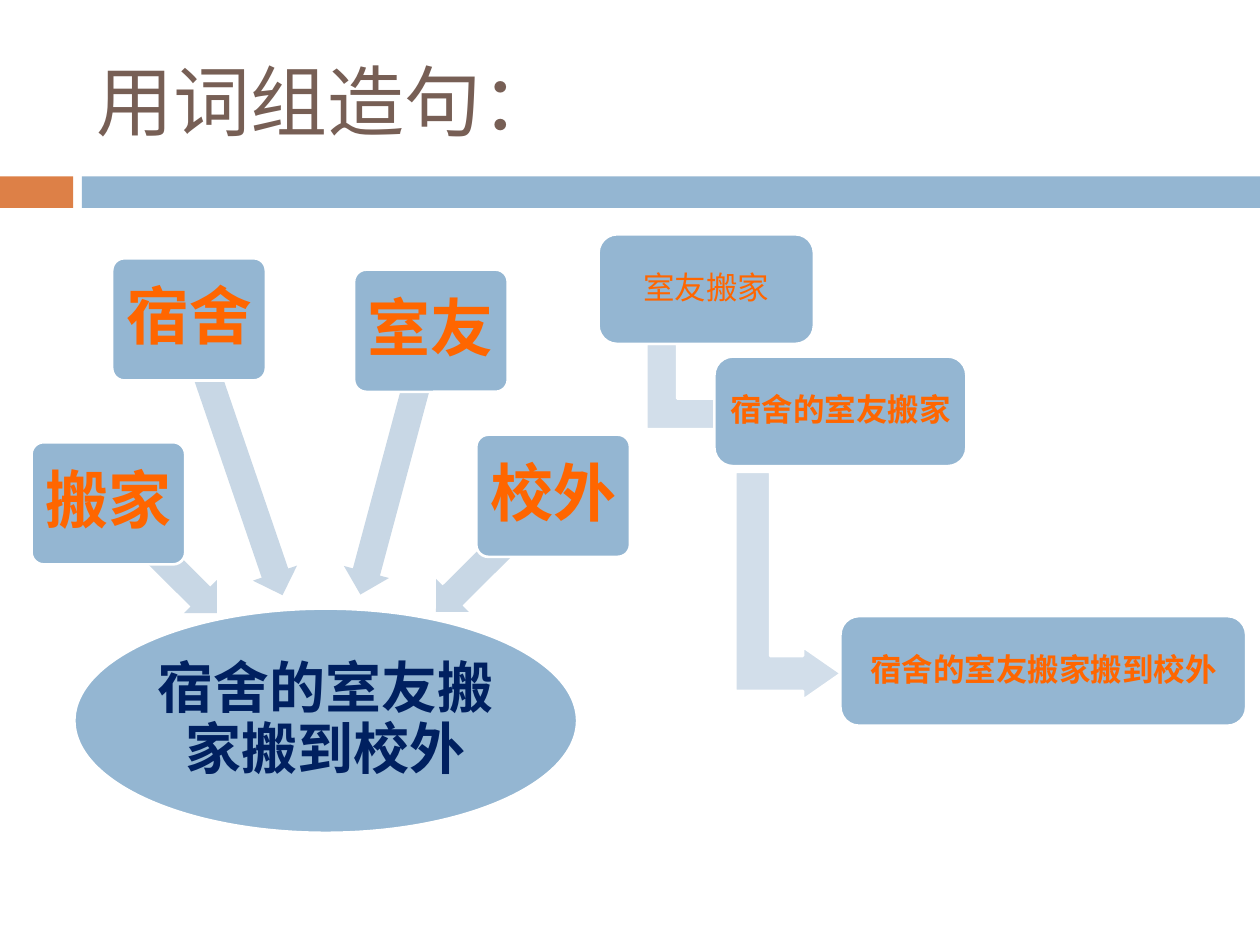
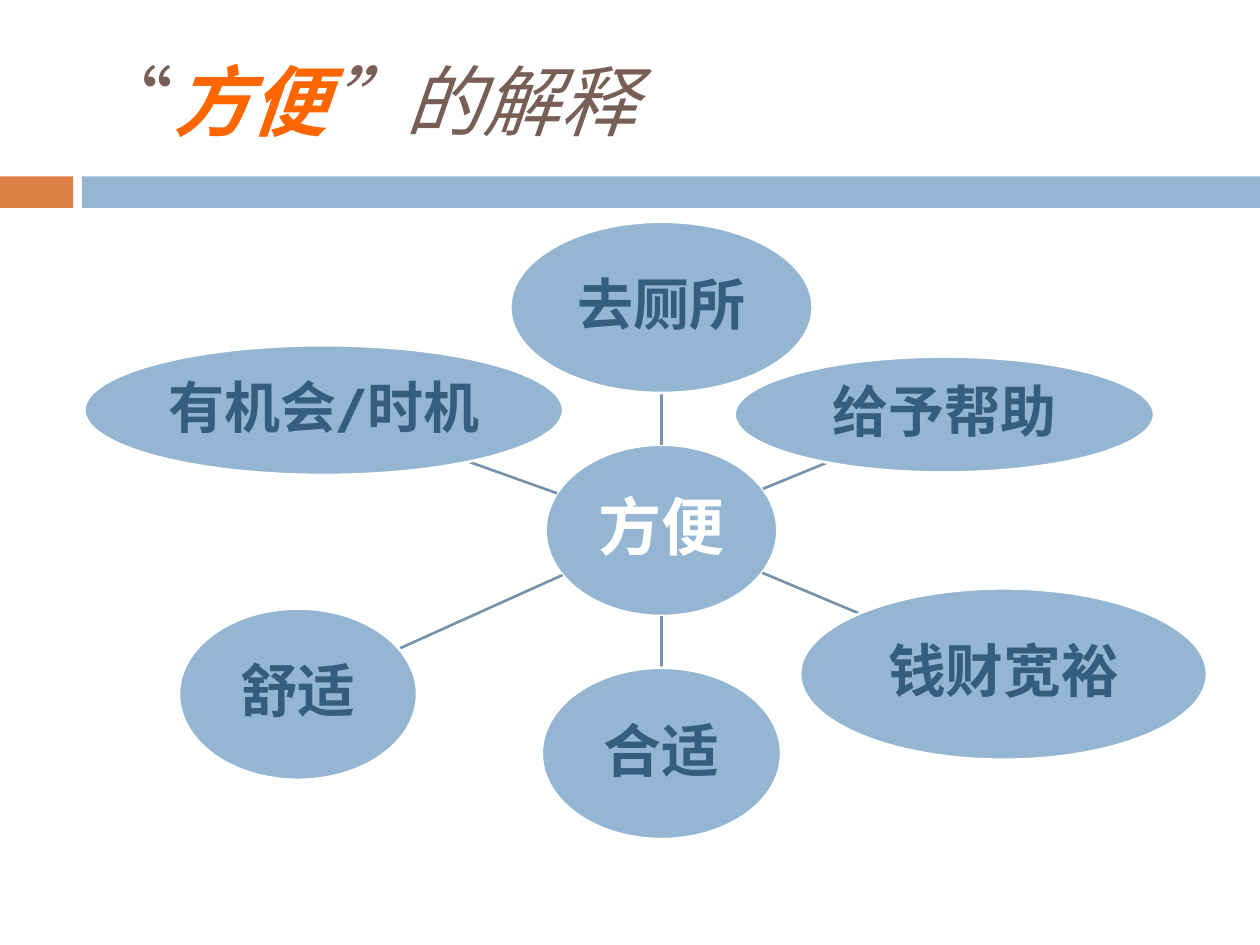
import math

import pptx
import pptx.dml.color
import pptx.enum.lang
import pptx.enum.shapes
import pptx.enum.text
import pptx.oxml.ns
import pptx.util
from lxml import etree

SHAPE = pptx.enum.shapes.MSO_SHAPE
ALIGN = pptx.enum.text.PP_ALIGN
COLORS = {
    "band": "94B6D2", "accent": "DD8047", "title": "775F55", "white": "FFFFFF",
    "orange": "FF6600", "navy": "002060", "steel": "355D7E",
    "arrow": "C8D7E5", "step": "D2DEEA", "spoke": "7792A8",
}


def px(count):
    return pptx.util.Emu(round(count * 9144))


def color(name):
    return pptx.dml.color.RGBColor.from_string(COLORS[name])


def write_span(para, text, size=44, ink="title", bold=False, italic=False, face="Cabin"):
    span = para.add_run()
    span.text = text
    font = span.font
    font.name, font.size = face, pptx.util.Pt(size)
    font.bold, font.italic = bold, italic
    font.color.rgb = color(ink)
    font.language_id = pptx.enum.lang.MSO_LANGUAGE_ID.SIMPLIFIED_CHINESE


class SlideBuilder:
    def __init__(self):
        self.deck = pptx.Presentation()
        self.deck.slide_width, self.deck.slide_height = px(1000), px(750)
        self.page = None

    def new_page(self, *title_spans):
        self.page = self.deck.slides.add_slide(self.deck.slide_layouts[6])
        self.shape(SHAPE.RECTANGLE, (0, 140, 58, 25), "accent", outline=False)
        self.shape(SHAPE.RECTANGLE, (65, 140, 935, 25), outline=False)
        box = self.page.shapes.add_textbox(*map(px, (67, 25, 892, 108)))
        frame = box.text_frame
        frame.word_wrap = True
        frame.vertical_anchor = pptx.enum.text.MSO_ANCHOR.MIDDLE
        for text, style in title_spans:
            write_span(frame.paragraphs[0], text, **style)

    def shape(self, kind, bounds, fill="band", outline=True, adjust=(), turn=0):
        shape = self.page.shapes.add_shape(kind, *map(px, bounds))
        shape.shadow.inherit = False
        shape.fill.solid()
        shape.fill.fore_color.rgb = color(fill)
        if outline:
            shape.line.color.rgb = color("white")
            shape.line.width = pptx.util.Pt(1.5)
        else:
            shape.line.fill.background()
        for index, value in enumerate(adjust):
            shape.adjustments[index] = value
        shape.rotation = turn
        return shape

    def node(self, kind, bounds, text, inset=2, adjust=(), wrap=True, **style):
        frame = self.shape(kind, bounds, adjust=adjust).text_frame
        frame.word_wrap = wrap
        frame.vertical_anchor = pptx.enum.text.MSO_ANCHOR.MIDDLE
        frame.margin_left = frame.margin_right = px(inset)
        frame.margin_top = frame.margin_bottom = px(inset)
        para = frame.paragraphs[0]
        para.alignment = ALIGN.CENTER
        para.line_spacing = 0.9
        write_span(para, text, **style)

    def spoke(self, hub, petal):
        start, end = ellipse_edge(hub, petal), ellipse_edge(petal, hub)
        line = self.page.shapes.add_connector(
            pptx.enum.shapes.MSO_CONNECTOR.STRAIGHT, *map(px, start + end))
        line.line.color.rgb = color("spoke")
        line.line.width = pptx.util.Pt(1.5)
        etree.SubElement(line._element.spPr, pptx.oxml.ns.qn("a:effectLst"))


def center(bounds):
    left, top, width, height = bounds
    return left + width / 2, top + height / 2


def ellipse_edge(bounds, target):
    x, y = center(bounds)
    target_x, target_y = center(target)
    run, rise = target_x - x, target_y - y
    reach = 1 / math.hypot(run / (bounds[2] / 2), rise / (bounds[3] / 2))
    return x + run * reach, y + rise * reach


def build_sentence_page(builder):
    builder.new_page(("用词组造句：", {}))
    builder.node(SHAPE.OVAL, (59, 483, 399, 178), "宿舍的室友搬家搬到校外",
                 size=32, ink="navy", bold=True)
    words = [
        ("搬家", (25, 351), (68, 425, 122, 37), 224.9),
        ("宿舍", (89, 205), (72, 345, 230, 37), 251.1),
        ("室友", (281, 214), (206, 349, 216, 37), 285),
        ("校外", (378, 345), (327, 421, 131, 37), 315.2),
    ]
    for word, corner, arrow, turn in words:
        builder.shape(SHAPE.LEFT_ARROW, arrow, "arrow", False, (0.6, 0.5), turn)
        builder.node(SHAPE.ROUNDED_RECTANGLE, corner + (122, 97), word, inset=7,
                     adjust=(0.1,), size=36, ink="orange", bold=True)
    for arrow in ((518, 268, 74, 84), (535, 423, 181, 84)):
        builder.shape(SHAPE.BENT_UP_ARROW, arrow, "step",
                      adjust=(0.33, 0.25, 0.36), turn=90)
    steps = [
        ("室友搬家", 475, 186, 171, False),
        ("宿舍的室友搬家", 567, 283, 200, True),
        ("宿舍的室友搬家搬到校外", 667, 489, 322, True),
    ]
    for text, left, top, width, bold in steps:
        builder.node(SHAPE.ROUNDED_RECTANGLE, (left, top, width, 87), text, inset=7,
                     adjust=(0.17,), size=18, ink="orange", bold=bold)


def build_meaning_page(builder):
    builder.new_page(
        ("“", {}),
        ("方便", {"ink": "orange", "bold": True, "italic": True}),
        ("”的解释", {"italic": True}),
    )
    hub = (433, 353, 184, 136)
    builder.node(SHAPE.OVAL, hub, "方便", inset=3, size=36, ink="white", bold=True)
    meanings = [
        ("去厕所", (405, 176, 240, 136), 32, "Montserrat"),
        ("给予帮助", (583, 283, 333, 92), 32, "Cabin"),
        ("钱财宽裕", (635, 467, 323, 136), 33, "Cabin"),
        ("合适", (430, 530, 190, 136), 33, "Cabin"),
        ("舒适", (142, 483, 189, 136), 33, "Cabin"),
        ("有机会/时机", (67, 274, 380, 103), 32, "Cabin"),
    ]
    for text, petal, size, face in meanings:
        builder.spoke(hub, petal)
        builder.node(SHAPE.OVAL, petal, text, wrap=False, size=size, ink="steel",
                     bold=True, face=face)


def main():
    builder = SlideBuilder()
    build_sentence_page(builder)
    build_meaning_page(builder)
    builder.deck.save("out.pptx")


if __name__ == "__main__":
    main()
